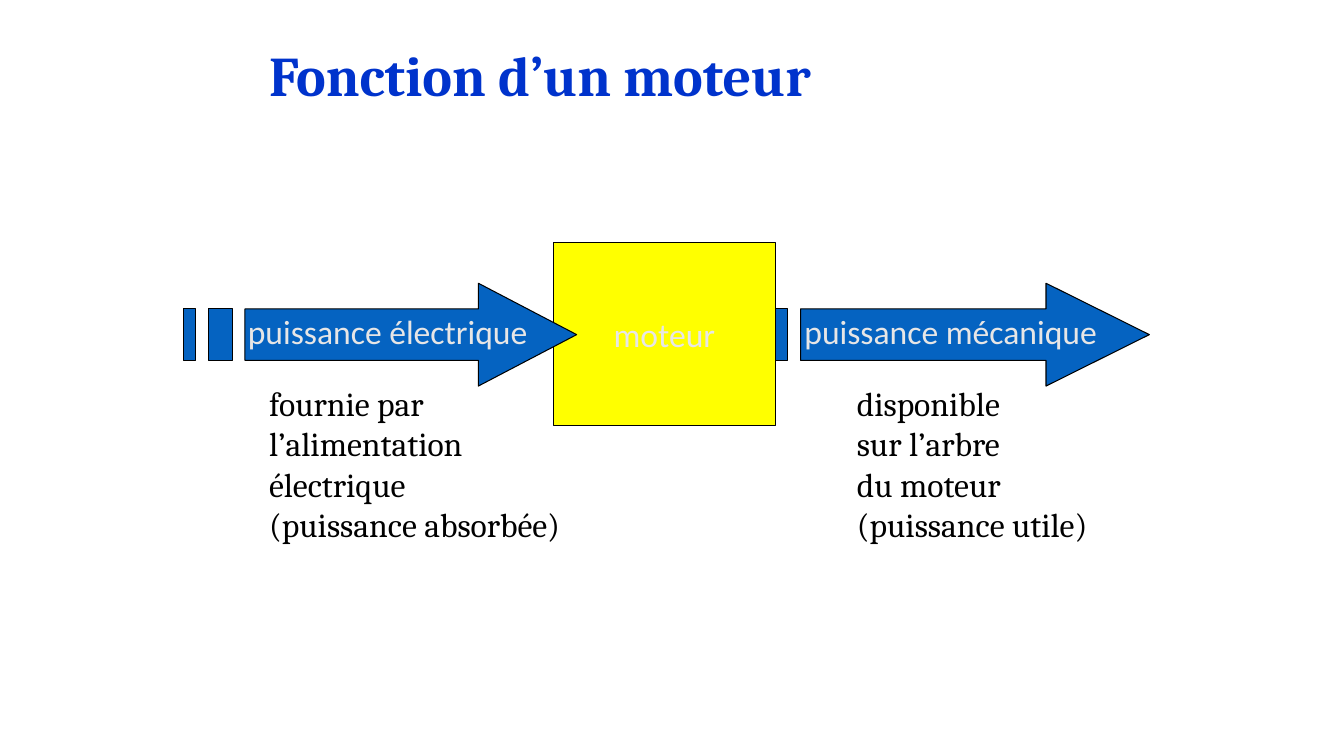
from dataclasses import dataclass

from pptx import Presentation
from pptx.dml.color import RGBColor
from pptx.enum.shapes import MSO_SHAPE as Shape
from pptx.enum.text import MSO_ANCHOR as Anchor, MSO_AUTO_SIZE as AutoSize, PP_ALIGN as Align
from pptx.util import Inches, Pt


@dataclass(frozen=True)
class Theme:
    """Colours, fonts and type sizes of the slide."""
    title: str = "0033CC"
    text: str = "000000"
    light: str = "E7E6E6"
    arrow: str = "0563C1"
    motor: str = "FFFF00"
    outline: str = "000000"
    serif: str = "Cambria"
    sans: str = "Calibri"
    title_size: int = 40
    text_size: int = 24
    line_width: float = 0.75


class Diagram:
    """Draws the elements of one slide in one theme."""

    def __init__(self, page, theme):
        self.page = page
        self.theme = theme

    def paint(self, shape, fill):
        """Give a shape its fill and outline."""
        shape.shadow.inherit = False
        shape.fill.solid()
        shape.fill.fore_color.rgb = RGBColor.from_string(fill)
        shape.line.color.rgb = RGBColor.from_string(self.theme.outline)
        shape.line.width = Pt(self.theme.line_width)

    def set_text(self, frame, lines, font, color, size=None, bold=False, align=Align.LEFT):
        """Set one paragraph for each line."""
        frame.text = "\n".join(lines)
        for para in frame.paragraphs:
            para.alignment = align
            para.font.name = font
            para.font.size = Pt(size or self.theme.text_size)
            para.font.bold = bold
            para.font.color.rgb = RGBColor.from_string(color)

    def title(self, text, left, top, width, height):
        """Add the slide heading."""
        box = self.page.shapes.add_textbox(Inches(left), Inches(top), Inches(width), Inches(height))
        frame = box.text_frame
        frame.word_wrap = True
        frame.vertical_anchor = Anchor.MIDDLE
        self.set_text(frame, [text], self.theme.serif, self.theme.title, self.theme.title_size, True)
        frame.paragraphs[0].line_spacing = 0.9

    def label(self, lines, left, top, width, height, font, color):
        """Add text in a box that fits its lines."""
        box = self.page.shapes.add_textbox(Inches(left), Inches(top), Inches(width), Inches(height))
        frame = box.text_frame
        frame.word_wrap = False
        frame.auto_size = AutoSize.SHAPE_TO_FIT_TEXT
        self.set_text(frame, lines, font, color)

    def block(self, text, left, top, width, height):
        """Add the motor rectangle."""
        box = self.page.shapes.add_shape(
            Shape.RECTANGLE, Inches(left), Inches(top), Inches(width), Inches(height))
        self.paint(box, self.theme.motor)
        frame = box.text_frame
        frame.word_wrap = False
        frame.vertical_anchor = Anchor.MIDDLE
        self.set_text(frame, [text], self.theme.sans, self.theme.light, align=Align.CENTER)

    def striped_arrow(self, left, top, width, height):
        """Add an arrow with two stripes at its tail, outlined in fractions of its size."""
        head = [(3/4, 0), (3/4, 1/4), (5/32, 1/4), (5/32, 3/4), (3/4, 3/4), (3/4, 1), (1, 1/2)]
        stripes = [[(start, 1/4), (start, 3/4), (end, 3/4), (end, 1/4)]
                   for start, end in ((1/16, 1/8), (0, 1/32))]
        outlines = [[(Inches(left + x * width), Inches(top + y * height)) for x, y in outline]
                    for outline in (head, *stripes)]
        first, *others = outlines
        builder = self.page.shapes.build_freeform(*first[0])
        builder.add_line_segments(first[1:], close=True)
        for outline in others:
            builder.move_to(*outline[0])
            builder.add_line_segments(outline[1:], close=True)
        self.paint(builder.convert_to_shape(), self.theme.arrow)


def main():
    """Build and save the slide."""
    deck = Presentation()
    deck.slide_width, deck.slide_height = Inches(13.33), Inches(7.5)
    theme = Theme()
    diagram = Diagram(deck.slides.add_slide(deck.slide_layouts[6]), theme)

    diagram.striped_arrow(7.3, 2.81, 4.1, 1.02)
    diagram.title("Fonction d’un moteur", 2.57, 0.52, 7.36, 0.52)
    diagram.block("moteur", 5.49, 2.41, 2.2, 1.81)
    diagram.striped_arrow(1.82, 2.81, 3.9, 1.02)

    for text, left, width in (("puissance électrique", 2.36, 3.01),
                              ("puissance mécanique", 7.88, 3.13)):
        diagram.label([text], left, 3.04, width, 0.5, theme.sans, theme.light)

    supplied = ["fournie par", "l’alimentation", "électrique", "(puissance absorbée)"]
    delivered = ["disponible", "sur l’arbre", "du moteur", "(puissance utile)"]
    for lines, left, width in ((supplied, 2.57, 3.28), (delivered, 8.4, 2.6)):
        diagram.label(lines, left, 3.75, width, 1.72, theme.serif, theme.text)

    deck.save("out.pptx")


if __name__ == "__main__":
    main()
